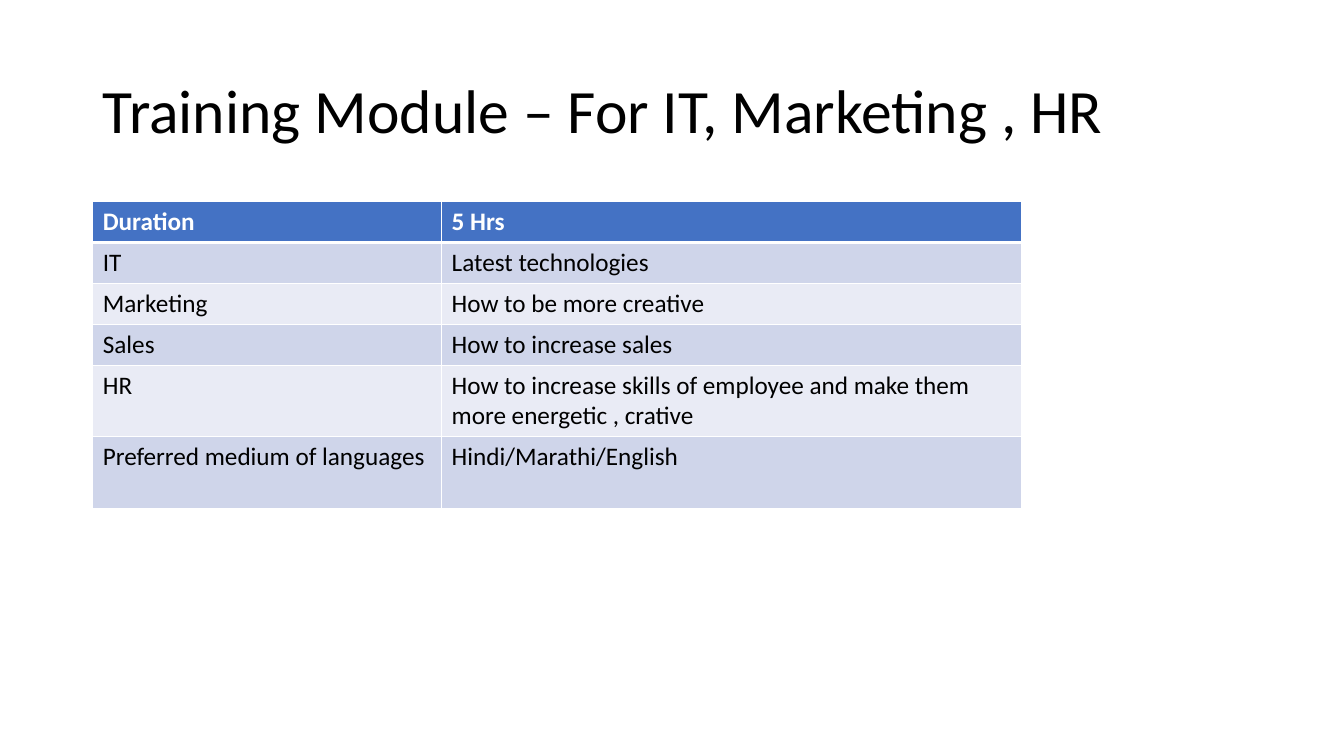
"""Builds the training module slide with its title and schedule table."""
from lxml import etree
from pptx import Presentation
from pptx.dml.color import RGBColor
from pptx.enum.text import MSO_ANCHOR, PP_ALIGN
from pptx.oxml.ns import qn
from pptx.util import Inches, Pt

LEFT = PP_ALIGN.LEFT
MIDDLE = MSO_ANCHOR.MIDDLE
TITLE_ONLY = 5
FONT = "Calibri"
COLORS = {
    "text": "000000",
    "white": "FFFFFF",
    "header": "4472C4",
    "odd": "CFD5EA",
    "even": "E9EBF5",
}
COLUMN_WIDTHS = [3.46, 5.75]
ROW_HEIGHTS = [0.4] * 4 + [0.71] * 2
ROWS = [
    ("Duration", "5 Hrs"),
    ("IT", "Latest technologies"),
    ("Marketing", "How to be more creative"),
    ("Sales", "How to increase sales"),
    ("HR", "How to increase skills of employee and make them more energetic , crative"),
    ("Preferred medium of languages", "Hindi/Marathi/English"),
]


def write_text(text_frame, text, size, color, bold=False):
    text_frame.text = text
    paragraph = text_frame.paragraphs[0]
    paragraph.alignment = LEFT
    font = paragraph.runs[0].font
    for name, value in {"name": FONT, "size": Pt(size), "bold": bold}.items():
        setattr(font, name, value)
    font.color.rgb = RGBColor.from_string(COLORS[color])
    return paragraph


def add_title(slide, text):
    title = slide.shapes.title
    place = {"left": 0.92, "top": 0.4, "width": 11.5, "height": 1.45}
    for name, value in place.items():
        setattr(title, name, Inches(value))
    title.text_frame.vertical_anchor = MIDDLE
    write_text(title.text_frame, text, 44, "text").line_spacing = 0.9


def add_borders(cell, widths):
    properties = cell._tc.get_or_add_tcPr()
    for side, width in widths.items():
        line = etree.SubElement(properties, qn(f"a:ln{side}"), w=str(Pt(width)))
        fill = etree.SubElement(line, qn("a:solidFill"))
        etree.SubElement(fill, qn("a:srgbClr"), val=COLORS["white"])


def format_cell(cell, text, row_index):
    is_header = row_index == 0
    fill_color = "header" if is_header else ("even", "odd")[row_index % 2]
    add_borders(cell, {
        "L": 1,
        "R": 1,
        "T": 3 if row_index == 1 else 1,
        "B": 3 if is_header else 1,
    })
    cell.fill.solid()
    cell.fill.fore_color.rgb = RGBColor.from_string(COLORS[fill_color])
    write_text(cell.text_frame, text, 18, "white" if is_header else "text", is_header)


def add_schedule(slide):
    table = slide.shapes.add_table(
        len(ROWS), len(COLUMN_WIDTHS), Inches(0.92), Inches(2),
        Inches(sum(COLUMN_WIDTHS)), Inches(sum(ROW_HEIGHTS)),
    ).table
    for column, width in zip(table.columns, COLUMN_WIDTHS):
        column.width = Inches(width)
    for row_index, (row, height, texts) in enumerate(zip(table.rows, ROW_HEIGHTS, ROWS)):
        row.height = Inches(height)
        for cell, text in zip(row.cells, texts):
            format_cell(cell, text, row_index)


def main():
    presentation = Presentation()
    presentation.slide_width = Inches(13.33)
    presentation.slide_height = Inches(7.5)
    slide = presentation.slides.add_slide(presentation.slide_layouts[TITLE_ONLY])
    add_title(slide, "Training Module – For IT, Marketing , HR")
    add_schedule(slide)
    presentation.save("out.pptx")


if __name__ == "__main__":
    main()
